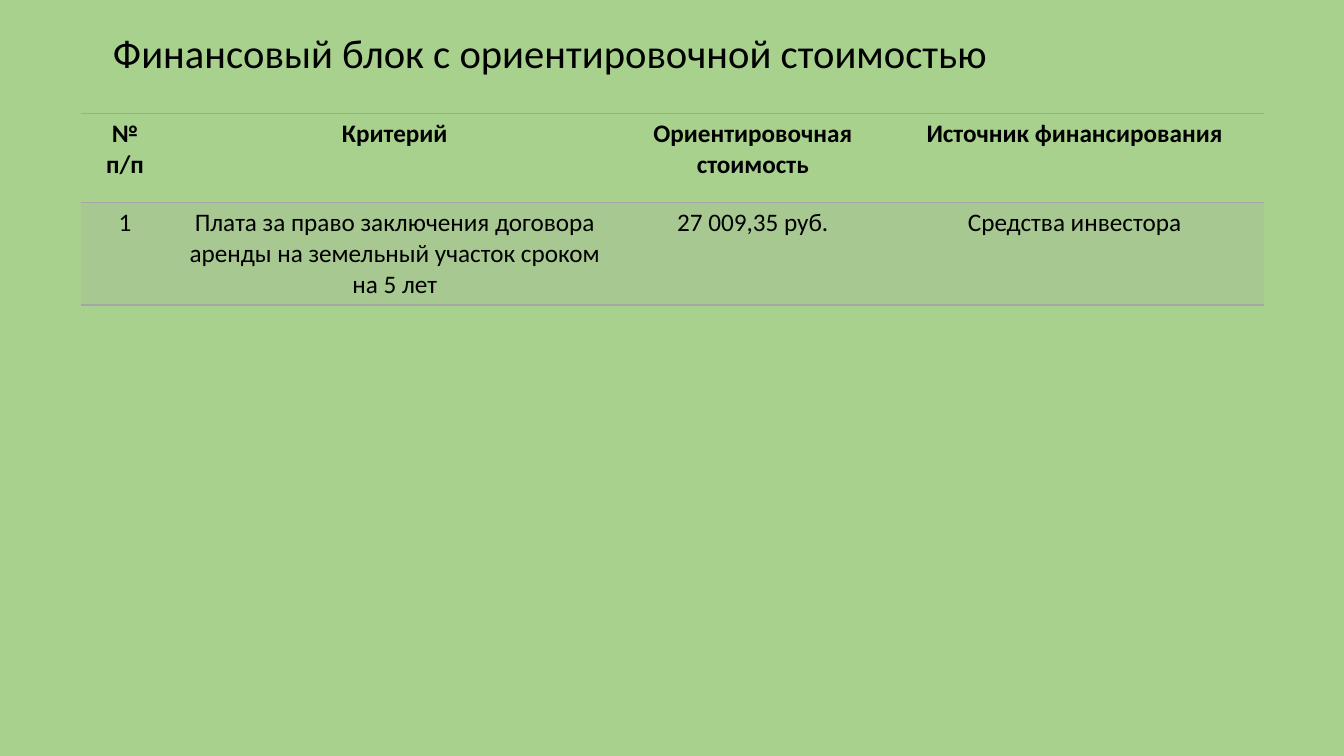
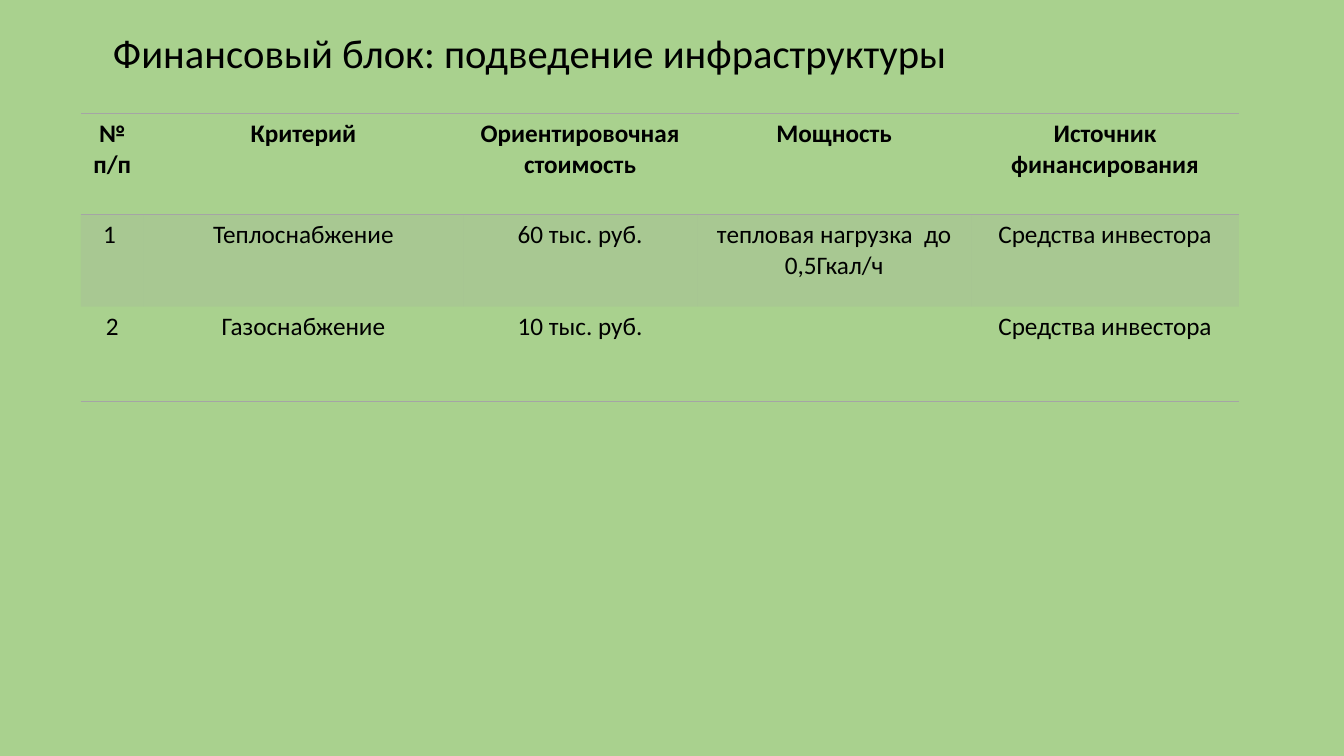
from dataclasses import dataclass

from lxml import etree
from pptx import Presentation
from pptx import util as u
from pptx.dml.color import RGBColor
from pptx.enum import text
from pptx.oxml import ns

# Shared look
PX = 9525  # EMU in one px, 96 px to the inch
SIZE = (1280, 720)
TITLE = (98, 12, 1104, 81)
LEFT, TOP = 77, 108
GREEN, GREY, BLACK = "A9D18E", "A5A5A5", "000000"
TINT = 20  # opacity of banded rows, percent
PLAIN = "{2D5ABB26-0587-4C30-8999-92F81FD0307C}"  # table style without grid
HEAD = {"name": "Calibri", "size": u.Pt(18), "bold": True}
BODY = {**HEAD, "bold": False}
BIG = {**BODY, "size": u.Pt(29)}


@dataclass
class Page:
    title: str
    cols: list[int]
    rows: list[int]
    cells: list[list[str]]


PAGES = [
    Page(
        "Финансовый блок с ориентировочной стоимостью",
        [84, 430, 252, 361],
        [85, 82],
        [
            ["№ п/п", "Критерий", "Ориентировочная стоимость",
             "Источник финансирования"],
            ["1", "Плата за право заключения договора аренды "
             "на земельный участок сроком на 5 лет",
             "27 009,35 руб.", "Средства инвестора"],
        ],
    ),
    Page(
        "Финансовый блок: подведение инфраструктуры",
        [60, 304, 223, 261, 255],
        [96, 88, 90],
        [
            ["№ п/п", "Критерий", "Ориентировочная стоимость",
             "Мощность", "Источник финансирования"],
            ["1 ", "Теплоснабжение", "60 тыс. руб.",
             "тепловая нагрузка  до 0,5Гкал/ч", "Средства инвестора"],
            ["2", "Газоснабжение", "10 тыс. руб.", "",
             "Средства инвестора"],
        ],
    ),
]


def px(num: int) -> int:
    return u.Emu(num * PX)


def paint(fill, color: str) -> None:
    fill.solid()
    fill.fore_color.rgb = RGBColor.from_string(color)


def style(para, form: dict, align) -> None:
    para.alignment = align
    for key, val in form.items():
        setattr(para.font, key, val)
    paint(para.font.fill, BLACK)


def head(slide, words: str) -> None:
    shape = slide.shapes.title
    for key, val in zip(("left", "top", "width", "height"), TITLE):
        setattr(shape, key, px(val))
    frame = shape.text_frame
    frame.text = words
    frame.word_wrap = True
    frame.auto_size = text.MSO_AUTO_SIZE.NONE
    frame.vertical_anchor = text.MSO_ANCHOR.MIDDLE
    para = frame.paragraphs[0]
    style(para, BIG, text.PP_ALIGN.LEFT)
    para.line_spacing = 0.9


def tint(cell) -> None:
    paint(cell.fill, GREY)
    color = cell._tc.tcPr.find(".//" + ns.qn("a:srgbClr"))
    etree.SubElement(color, ns.qn("a:alpha"), val=str(TINT * 1000))


def rule(cell, sides: list[str]) -> None:
    """Draw borders; they stand before the fill in the cell's XML."""
    props = cell._tc.get_or_add_tcPr()
    for pos, side in enumerate(sides):
        line = etree.Element(ns.qn("a:ln" + side), w=str(u.Pt(1)))
        fill = etree.SubElement(line, ns.qn("a:solidFill"))
        etree.SubElement(fill, ns.qn("a:srgbClr"), val=GREY)
        props.insert(pos, line)


def grid(slide, page: Page) -> None:
    count = len(page.rows)
    table = slide.shapes.add_table(
        count, len(page.cols), px(LEFT), px(TOP),
        px(sum(page.cols)), px(sum(page.rows))).table
    table._tbl.tblPr.find(ns.qn("a:tableStyleId")).text = PLAIN
    for col, width in zip(table.columns, page.cols):
        col.width = px(width)
    for row, height in zip(table.rows, page.rows):
        row.height = px(height)

    # Header has rules above and below, odd rows a tint, the last a rule
    for r, words in enumerate(page.cells):
        sides = ["T", "B"] if r == 0 else ["B"] if r == count - 1 else []
        for c, word in enumerate(words):
            cell = table.cell(r, c)
            cell.text = word
            style(cell.text_frame.paragraphs[0], BODY if r else HEAD,
                  text.PP_ALIGN.CENTER)
            if r % 2:
                tint(cell)
            else:
                cell.fill.background()
            rule(cell, sides)


def main() -> None:
    deck = Presentation()
    deck.slide_width, deck.slide_height = map(px, SIZE)
    paint(deck.slide_master.background.fill, GREEN)
    for page in PAGES:
        slide = deck.slides.add_slide(deck.slide_layouts[5])  # title only
        head(slide, page.title)
        grid(slide, page)
    deck.save("out.pptx")


if __name__ == "__main__":
    main()
